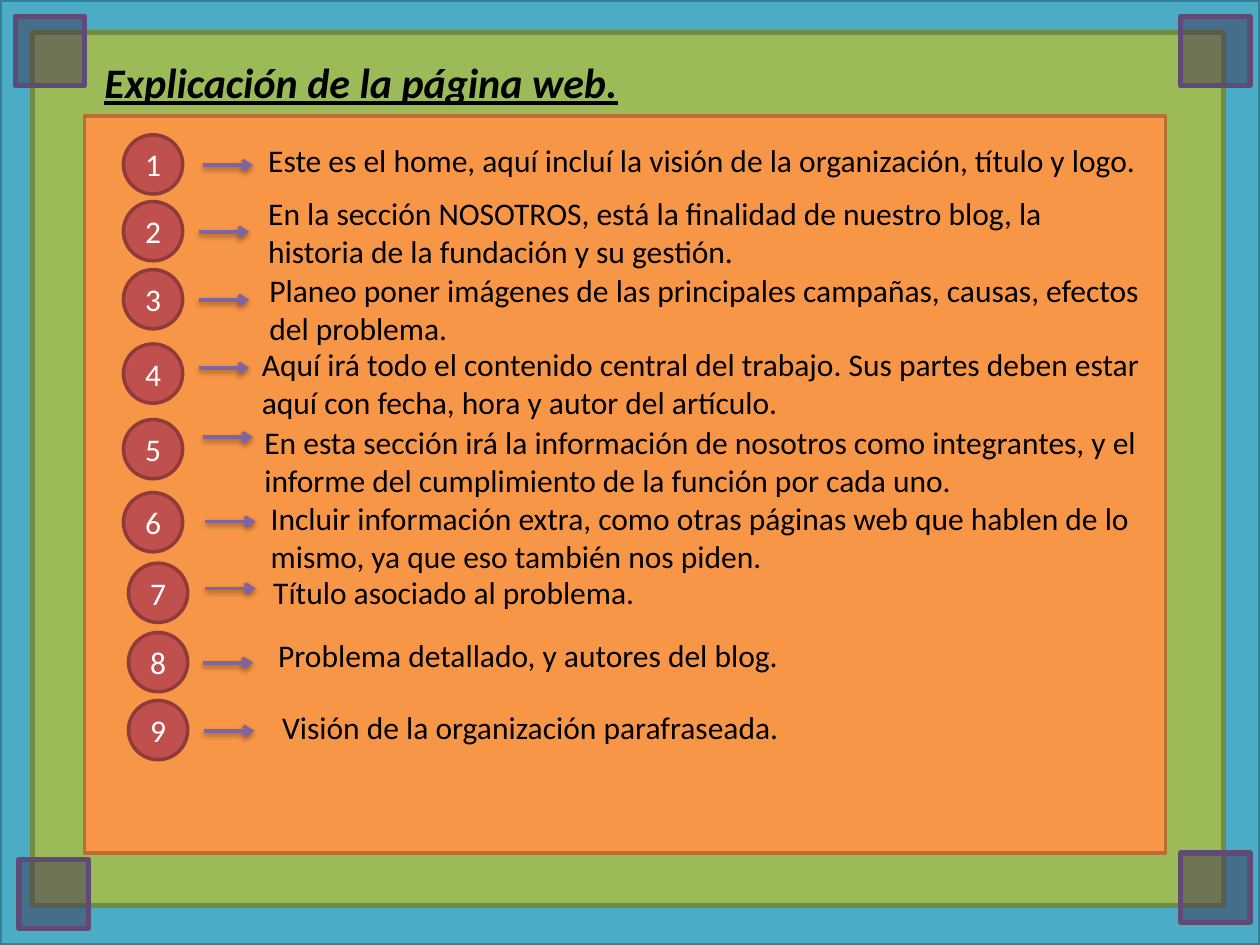
from lxml import etree
from pptx import Presentation
from pptx.dml.color import RGBColor
from pptx.enum.shapes import MSO_CONNECTOR, MSO_SHAPE
from pptx.enum.text import MSO_ANCHOR, MSO_AUTO_SIZE, PP_ALIGN
from pptx.oxml import parse_xml
from pptx.oxml.ns import nsdecls, qn
from pptx.util import Inches, Pt

RECT, OVAL = MSO_SHAPE.RECTANGLE, MSO_SHAPE.OVAL
LINE = MSO_CONNECTOR.STRAIGHT
MIDDLE, TOP = MSO_ANCHOR.MIDDLE, MSO_ANCHOR.TOP
CENTER, LEFT = PP_ALIGN.CENTER, PP_ALIGN.LEFT
FIT = MSO_AUTO_SIZE.SHAPE_TO_FIT_TEXT

COLS, ROWS = 100, 75  # grid of the slide, one cell is 0.1 inch
DOT = 4.7             # diameter of a number

SHADOW = (f'<a:effectLst {nsdecls("a")}><a:outerShdw blurRad="40000" '
          'dist="20000" dir="5400000" rotWithShape="0"><a:srgbClr val="000000">'
          '<a:alpha val="38000"/></a:srgbClr></a:outerShdw></a:effectLst>')

# dot left, dot top, arrow left, arrow row, text left, text top, width, wrap, text
ITEMS = [
    (9.8, 10.7, 16.1, 13.1, 20.3, 10.7, 71.1, False,
     "Este es el home, aquí incluí la visión de la organización, título y logo."),
    (9.8, 16.0, 15.8, 18.4, 20.3, 14.9, 71.1, True,
     "En la sección NOSOTROS, está la finalidad de nuestro blog, "
     "la historia de la fundación y su gestión."),
    (9.8, 21.4, 15.8, 23.8, 20.4, 21.0, 72.2, True,
     "Planeo poner imágenes de las principales campañas, causas, "
     "efectos del problema."),
    (9.8, 27.3, 15.8, 29.2, 19.8, 26.9, 72.4, True,
     "Aquí irá todo el contenido central del trabajo. Sus partes deben estar "
     "aquí con fecha, hora y autor del artículo."),
    (9.8, 33.3, 16.1, 34.7, 20.0, 33.1, 71.6, True,
     "En esta sección irá la información de nosotros como integrantes, y el "
     "informe del cumplimiento de la función por cada uno."),
    (9.8, 39.1, 16.3, 41.4, 20.5, 39.1, 71.5, True,
     "Incluir información extra, como otras páginas web que hablen de lo "
     "mismo, ya que eso también nos piden."),
    (10.2, 44.7, 16.3, 46.7, 20.7, 45.0, 31.0, False,
     "Título asociado al problema."),
    (10.2, 50.2, 16.1, 52.6, 21.1, 50.0, 42.2, False,
     "Problema detallado, y autores del blog."),
    (10.2, 55.6, 16.2, 58.0, 21.4, 55.7, 41.9, False,
     "Visión de la organización parafraseada."),
]


def grid(*cells):
    return [Inches(cell / 10) for cell in cells]


def color(code):
    return RGBColor.from_string(code)


def write(frame, text, size=18, ink="000000", align=LEFT, anchor=TOP,
          wrap=True, bold=False, italic=False, under=False):
    frame.word_wrap = wrap
    frame.vertical_anchor = anchor
    para = frame.paragraphs[0]
    para.alignment = align
    run = para.add_run()
    run.text = text
    font = run.font
    font.name, font.size = "Calibri", Pt(size)
    font.bold, font.italic, font.underline = bold, italic, under
    font.color.rgb = color(ink)


class Deck:
    def __init__(self):
        self.prs = Presentation()
        self.prs.slide_width, self.prs.slide_height = grid(COLS, ROWS)
        self.slide = self.prs.slides.add_slide(self.prs.slide_layouts[6])
        self.shapes = self.slide.shapes

    def shape(self, kind, box, fill, edge, width=2, alpha=None):
        item = self.shapes.add_shape(kind, *grid(*box))
        item.shadow.inherit = False
        item.fill.solid()
        item.fill.fore_color.rgb = color(fill)
        item.line.color.rgb = color(edge)
        item.line.width = Pt(width)
        if alpha is not None:
            tone = item._element.spPr.find(qn("a:solidFill"))[0]
            etree.SubElement(tone, qn("a:alpha")).set("val", str(alpha * 1000))
        return item

    def dot(self, left, top, label):
        frame = self.shape(OVAL, (left, top, DOT, DOT),
                           "C0504D", "8E3B39").text_frame
        frame.margin_left = frame.margin_right = 0
        frame.margin_top = frame.margin_bottom = 0
        write(frame, label, ink="FFFFFF", align=CENTER, anchor=MIDDLE)

    def arrow(self, left, row, span=4):
        item = self.shapes.add_connector(LINE, *grid(left, row, left + span, row))
        item.line.color.rgb = color("8064A2")
        item.line.width = Pt(2)
        tail = etree.SubElement(item.line._get_or_add_ln(), qn("a:tailEnd"))
        tail.set("type", "arrow")
        item._element.spPr.append(parse_xml(SHADOW))

    def text(self, box, text, **style):
        frame = self.shapes.add_textbox(*grid(*box)).text_frame
        write(frame, text, **style)
        frame.auto_size = FIT


def main():
    deck = Deck()

    # Frame and its four corners
    deck.shape(RECT, (0, 0, COLS, ROWS), "4BACC6", "377F92")
    deck.shape(RECT, (2.6, 2.6, 94.5, 69.3), "9BBB59", "738A42", 3)
    for left, top in [(1.2, 1.3), (93.7, 1.3), (1.5, 68.2), (93.7, 67.7)]:
        deck.shape(RECT, (left, top, 5.5, 5.5), "403152", "5F4A78", 3, alpha=50)

    # Panel and title
    deck.shape(RECT, (6.7, 9.2, 85.8, 58.5), "F79646", "B76F34")
    deck.text((7.3, 4, 43, 5), "Explicación de la página web.", size=24,
              wrap=False, bold=True, italic=True, under=True)

    # Numbered list
    for num, item in enumerate(ITEMS, 1):
        dot_x, dot_y, tip_x, tip_y, left, top, width, wrap, words = item
        deck.dot(dot_x, dot_y, str(num))
        deck.arrow(tip_x, tip_y)
        deck.text((left, top, width, 7.1 if wrap else 4), words, wrap=wrap)

    deck.prs.save("out.pptx")


if __name__ == "__main__":
    main()
